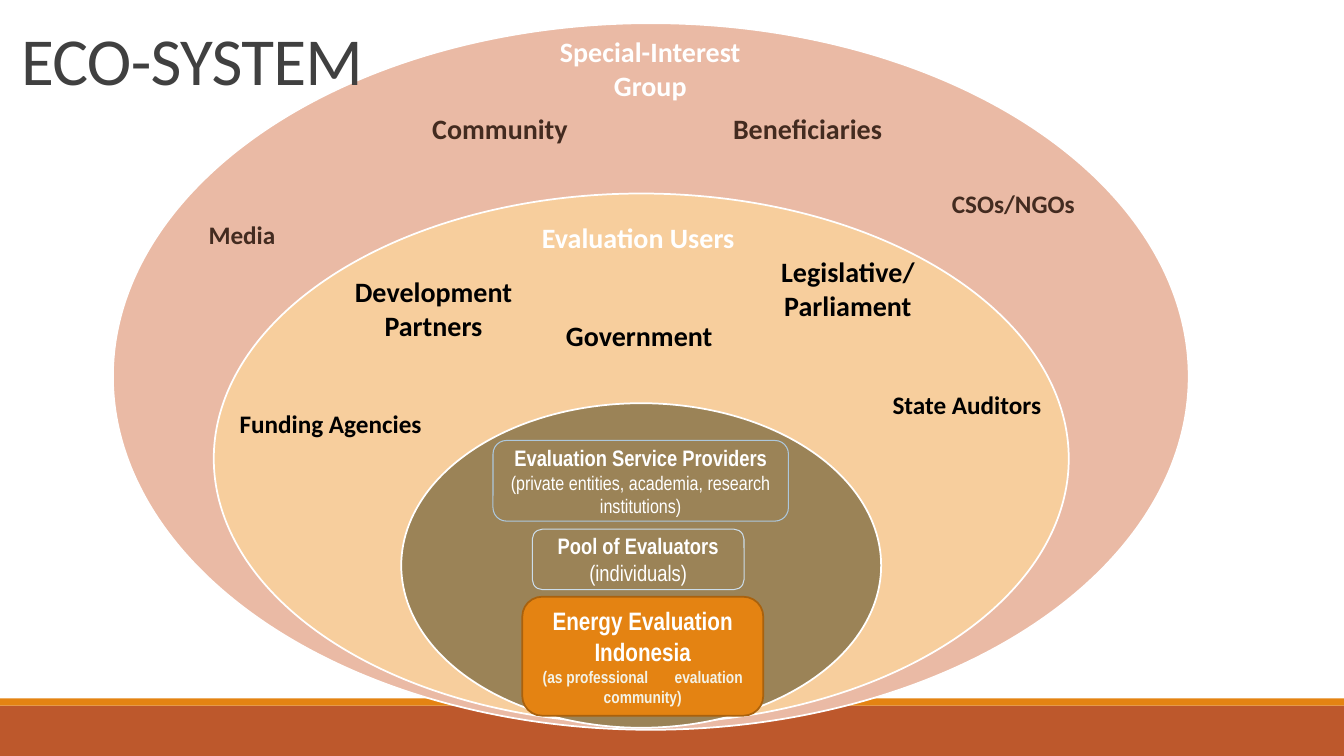
from pptx import Presentation
from pptx.dml.color import RGBColor
from pptx.enum.shapes import MSO_SHAPE
from pptx.enum.text import MSO_ANCHOR, PP_ALIGN
from pptx.util import Inches, Pt

RECT, OVAL, ROUNDED = MSO_SHAPE.RECTANGLE, MSO_SHAPE.OVAL, MSO_SHAPE.ROUNDED_RECTANGLE
MIDDLE, CENTER, LEFT = MSO_ANCHOR.MIDDLE, PP_ALIGN.CENTER, PP_ALIGN.LEFT
WHITE, BLACK, BROWN, CREAM = "FFFFFF", "000000", "432B20", "F3F2E6"
SANS, NARROW = "Calibri", "Arial Narrow"

# Content: places are left, top, width, height in inches
TITLE = "ECO-SYSTEM"
TITLE_PLACE = (0.11, 0.25, 3.99, 0.79)
BANDS = [
    ((0, 7, 13.33, 0.5), "BD582C"),
    ((0, 6.93, 13.33, 0.07), "E48312"),
]
RINGS = [
    ((1.12, 0.23, 10.67, 7.01), "EABAA5"),
    ((2.12, 1.92, 8.48, 5.26), "F7CE9D"),
    ((3.98, 4, 4.76, 3.22), "9B8357"),
]
# Labels: lines, centre x, centre y, size, colour
LABELS = [
    (["Special-Interest Group"], 6.45, 0.68, 20, WHITE),
    (["Community"], 4.96, 1.27, 20, BROWN),
    (["Beneficiaries"], 8.01, 1.27, 20, BROWN),
    (["Media"], 2.4, 2.33, 18, BROWN),
    (["CSOs/NGOs"], 10.05, 2.02, 18, BROWN),
    (["Evaluation Users"], 6.33, 2.35, 20, WHITE),
    (["Development", "Partners"], 4.3, 3.06, 20, BLACK),
    (["Government"], 6.34, 3.33, 20, BLACK),
    (["Legislative/", "Parliament"], 8.41, 2.86, 20, BLACK),
    (["Funding Agencies"], 3.28, 4.2, 18, BLACK),
    (["State Auditors"], 9.59, 4.01, 18, BLACK),
]
# Core boxes: place, fill, line, line width, paragraphs of (spans, size, bold, colour)
CORE = [
    ((4.89, 4.37, 2.93, 0.8), None, "ADC8DD", 0.75, [
        (["Evaluation Service Providers"], 16, True, WHITE),
        (["(private entities, academia, research institutions)"], 14, False, WHITE)]),
    ((5.28, 5.25, 2.1, 0.6), None, "CCDDEA", 0.75, [
        (["Pool of Evaluators"], 16, True, WHITE),
        (["(individuals)"], 16, False, WHITE)]),
    ((5.18, 5.92, 2.39, 1.18), "E48312", "A9610D", 1.25, [
        (["Energy Evaluation Indonesia"], 18, True, WHITE),
        (["(as professional", " ", "evaluation community)"], 12, True, CREAM)]),
]
LABEL_WIDTH, LINE_HEIGHT = 2.6, 0.34
GAP_SPACING = 1600  # hundredths of a point added to a lone space


def color(value):
    return RGBColor.from_string(value)


def add_panel(page, kind, place, fill, line=None, width=1.25):
    panel = page.shapes.add_shape(kind, *map(Inches, place))
    panel.shadow.inherit = False
    if fill:
        panel.fill.solid()
        panel.fill.fore_color.rgb = color(fill)
    else:
        panel.fill.background()
    if line:
        panel.line.color.rgb = color(line)
        panel.line.width = Pt(width)
    else:
        panel.line.fill.background()
    return panel


def write(frame, paragraphs, font, align=CENTER):
    frame.vertical_anchor = MIDDLE
    for index, (spans, size, bold, tint) in enumerate(paragraphs):
        para = frame.add_paragraph() if index else frame.paragraphs[0]
        para.alignment = align
        for text in spans:
            span = para.add_run()
            span.text = text
            span.font.color.rgb = color(tint)
            for name, value in {"name": font, "size": Pt(size), "bold": bold}.items():
                setattr(span.font, name, value)
            if text == " ":
                span.font._element.set("spc", str(GAP_SPACING))


def main():
    deck = Presentation()
    deck.slide_width, deck.slide_height = Inches(13.33), Inches(7.5)
    page = deck.slides.add_slide(deck.slide_layouts[5])

    # Footer bands and nested ellipses
    for place, fill in BANDS:
        add_panel(page, RECT, place, fill)
    for place, fill in RINGS:
        add_panel(page, OVAL, place, fill, WHITE)

    # Title, raised above the ellipses
    title = page.shapes.title
    for name, value in zip(("left", "top", "width", "height"), TITLE_PLACE):
        setattr(title, name, Inches(value))
    write(title.text_frame, [([TITLE], 48, False, "404040")], SANS, LEFT)
    para = title.text_frame.paragraphs[0]
    para.line_spacing = 0.85
    para.runs[0].font._element.set("spc", "-50")
    page.shapes._spTree.append(title._element)

    # Stakeholder labels
    for lines, x, y, size, tint in LABELS:
        height = LINE_HEIGHT * len(lines) + 0.1
        box = page.shapes.add_textbox(Inches(x - LABEL_WIDTH / 2), Inches(y - height / 2),
                                      Inches(LABEL_WIDTH), Inches(height))
        box.text_frame.word_wrap = True
        write(box.text_frame, [([line], size, True, tint) for line in lines], SANS)

    # Core boxes
    for place, fill, line, width, paragraphs in CORE:
        box = add_panel(page, ROUNDED, place, fill, line, width)
        box.text_frame.word_wrap = True
        write(box.text_frame, paragraphs, NARROW)

    deck.save("out.pptx")


if __name__ == "__main__":
    main()
